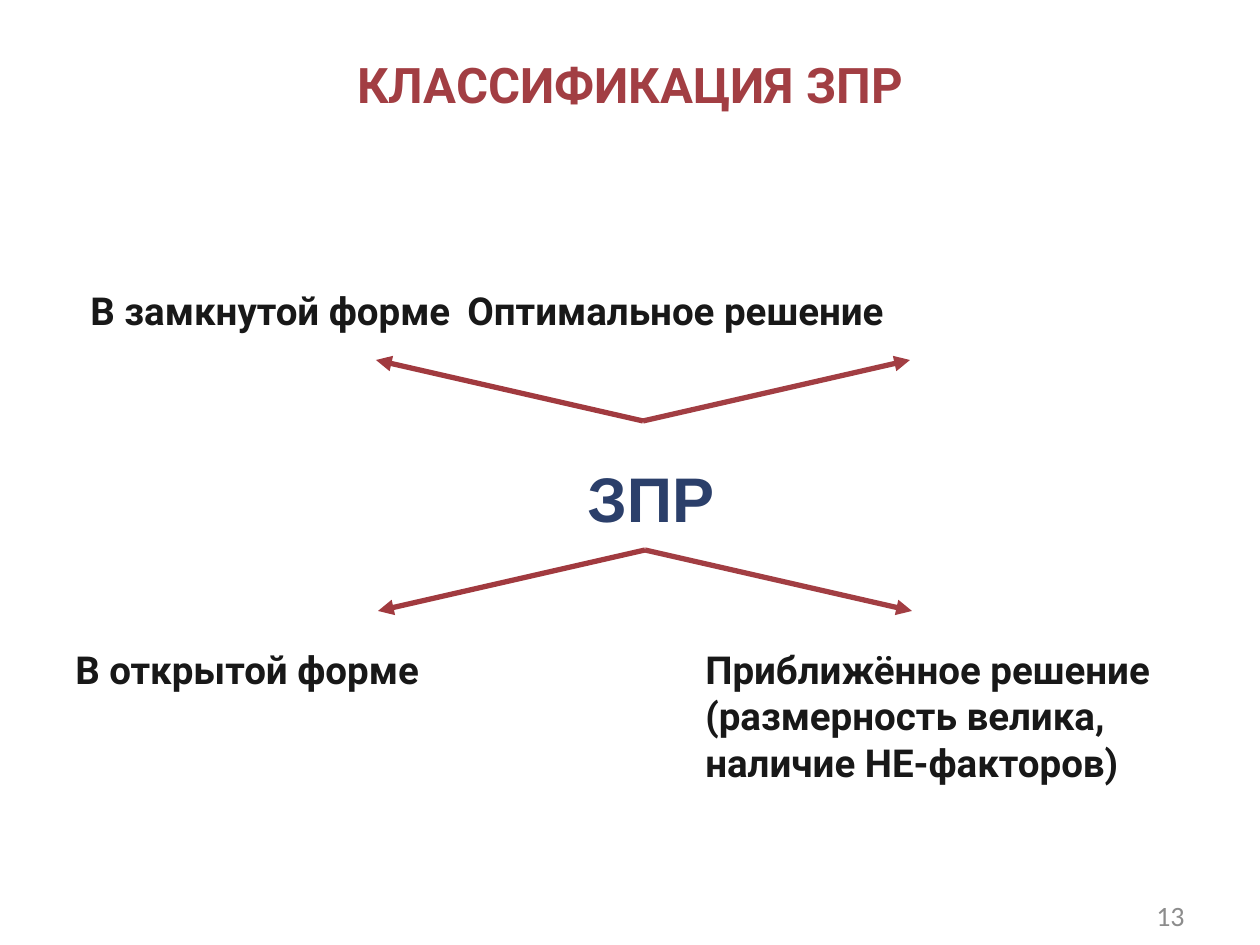
from pptx import Presentation
from pptx.dml.color import RGBColor
from pptx.enum.shapes import MSO_CONNECTOR
from pptx.enum.text import MSO_ANCHOR, PP_ALIGN
from pptx.oxml.ns import qn
from pptx.util import Emu, Pt
from lxml import etree

STRAIGHT = MSO_CONNECTOR.STRAIGHT
TOP, MIDDLE = MSO_ANCHOR.TOP, MSO_ANCHOR.MIDDLE
LEFT, CENTER, RIGHT = PP_ALIGN.LEFT, PP_ALIGN.CENTER, PP_ALIGN.RIGHT
PIXELS_PER_INCH = 126
RED, DARK_RED, NAVY, BLACK, GREY = "A23E43", "A13A3F", "2B3F6A", "181818", "8C8C8C"


def px(length):
    """Turn pixels into EMU."""
    return Emu(round(length * 914400 / PIXELS_PER_INCH))


def color(value):
    """Turn a hex string into a colour."""
    return RGBColor.from_string(value)


class SlideBuilder:
    """Hold the style and the current slide."""

    font = "Roboto"
    line_width = Pt(3)

    def __init__(self, presentation):
        """Add a title-only slide."""
        self.slide = presentation.slides.add_slide(presentation.slide_layouts[5])

    def place(self, shape, box):
        """Move and size a shape."""
        shape.left, shape.top, shape.width, shape.height = map(px, box)

    def add_lines(self, shape, lines, size, fill, font=None, bold=True,
                  align=LEFT, anchor=TOP, indent=0, tab=0):
        """Add one paragraph per line."""
        frame = shape.text_frame
        frame.word_wrap = True
        frame.vertical_anchor = anchor
        for index, line in enumerate(lines):
            paragraph = frame.add_paragraph() if index else frame.paragraphs[0]
            paragraph.alignment = align
            properties = paragraph._p.get_or_add_pPr()
            if indent:
                properties.set("indent", str(px(indent)))
            if tab:
                tabs = etree.SubElement(properties, qn("a:tabLst"))
                etree.SubElement(tabs, qn("a:tab"), pos=str(px(tab)), algn="l")
            run = paragraph.add_run()
            run.text = line
            run.font.name = font or self.font
            run.font.size = Pt(size)
            run.font.bold = bold
            run.font.color.rgb = color(fill)

    def title(self, box, text):
        """Format the title placeholder."""
        shape = self.slide.shapes.title
        self.place(shape, box)
        self.add_lines(shape, [text], 28, RED, align=CENTER, anchor=MIDDLE)

    def text(self, box, lines, size, fill, **style):
        """Add a text box."""
        shape = self.slide.shapes.add_textbox(*map(px, box))
        self.add_lines(shape, lines, size, fill, **style)

    def arrow(self, start, end, fill):
        """Add a straight arrow."""
        connector = self.slide.shapes.add_connector(STRAIGHT, *map(px, start + end))
        connector.line.color.rgb = color(fill)
        connector.line.width = self.line_width
        properties = connector._element.spPr
        etree.SubElement(properties.find(qn("a:ln")), qn("a:tailEnd"), type="triangle")
        etree.SubElement(properties, qn("a:effectLst"))

    def arrow_pair(self, apex, reach, rise):
        """Add two mirrored arrows leaving one point."""
        x, y = apex
        self.arrow(apex, (x + reach, y + rise), RED)
        self.arrow(apex, (x - reach, y + rise), DARK_RED)


def main():
    """Build the slide and save it."""
    presentation = Presentation()
    presentation.slide_width, presentation.slide_height = px(1260), px(945)
    builder = SlideBuilder(presentation)
    builder.title((63, 25, 1134, 117), "КЛАССИФИКАЦИЯ ЗПР")
    builder.text((1126, 890, 71, 50), ["13"], 16, GREY, font="Calibri",
                 bold=False, align=RIGHT, anchor=MIDDLE)
    builder.arrow_pair((645, 550), 267, 61)
    builder.text((77, 281, 1138, 97), ["В замкнутой форме\tОптимальное решение"],
                 22, BLACK, indent=1, tab=504)
    builder.text((513, 453, 267, 127), ["ЗПР"], 36, NAVY, font="Arial", indent=62)
    builder.text((63, 640, 1159, 152),
                 ["В открытой форме\tПриближённое решение",
                  "\t(размерность велика,",
                  "\tналичие НЕ-факторов)"],
                 22, BLACK, tab=630)
    builder.arrow_pair((643, 421), 267, -61)
    presentation.save("out.pptx")


if __name__ == "__main__":
    main()
